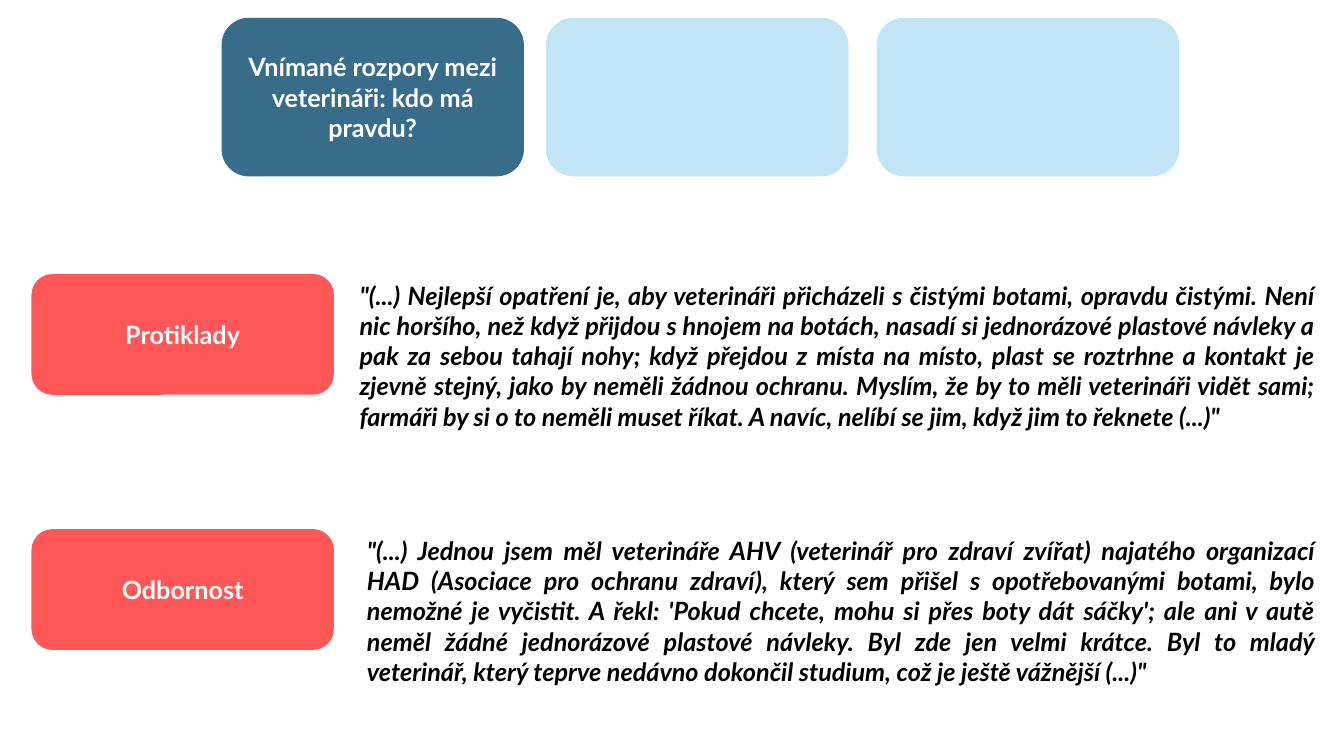
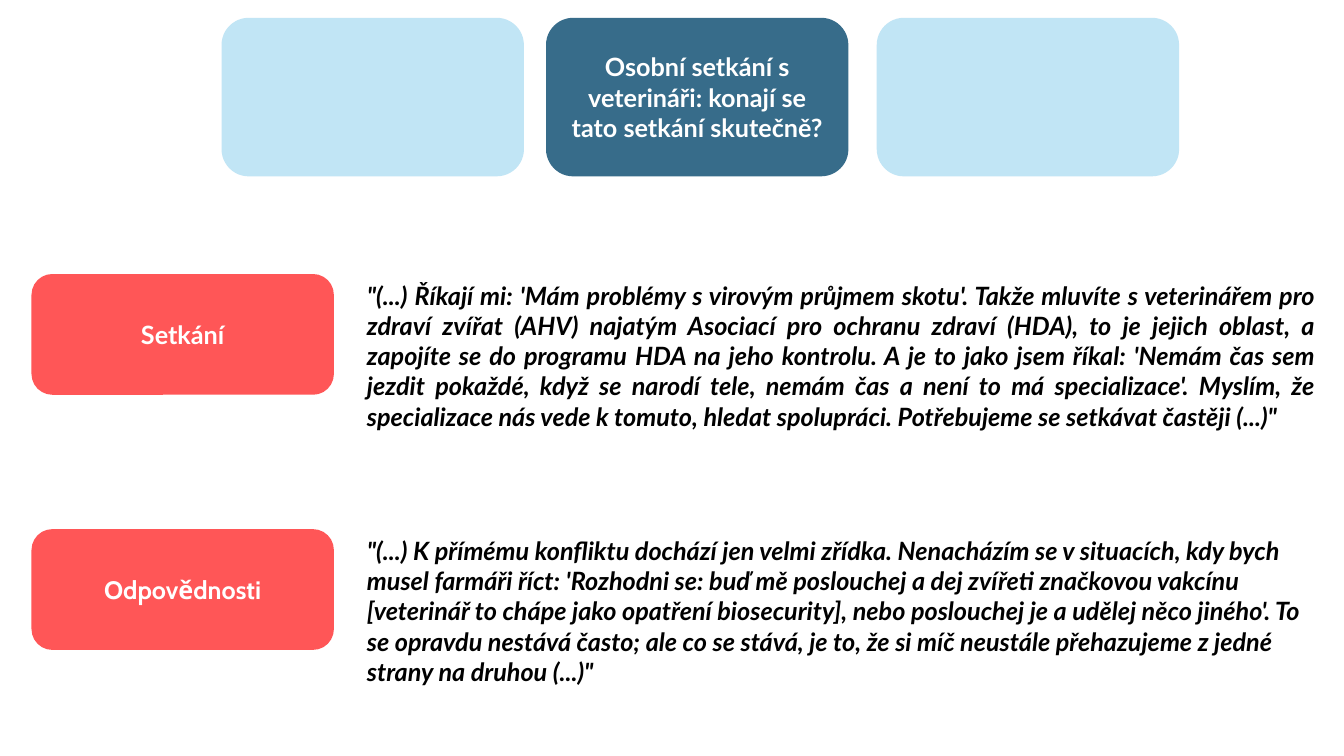
from pptx import Presentation
from pptx.dml.color import RGBColor
from pptx.enum import shapes, text
from pptx.util import Emu, Pt

PX = 9525
WHITE = RGBColor(0xFF, 0xFF, 0xFF)
BLACK = RGBColor(0x00, 0x00, 0x00)
CORAL = RGBColor(0xFF, 0x56, 0x57)
ACTIVE = RGBColor(0x37, 0x6C, 0x8A)
FADED = RGBColor(0xC1, 0xE5, 0xF5)

CARD_WIDTH = 286
TAB_LEFTS = (212, 521, 836)
TAB_TOP, TAB_HEIGHT = 18, 149
ROW_LEFT, ROW_RIGHT = 31, 1262
ROW_TOPS = (262, 505)
LABEL_HEIGHT, QUOTE_HEIGHT = 113, 156
QUOTE_INDENT = 309

CONTRASTS = (
    "\"(...) Nejlepší opatření je, aby veterináři přicházeli s čistými botami, "
    "opravdu čistými. Není nic horšího, než když přijdou s hnojem na botách, "
    "nasadí si jednorázové plastové návleky a pak za sebou tahají nohy; když "
    "přejdou z místa na místo, plast se roztrhne a kontakt je zjevně stejný, "
    "jako by neměli žádnou ochranu. Myslím, že by to měli veterináři vidět sami; "
    "farmáři by si o to neměli muset říkat. A navíc, nelíbí se jim, když jim to "
    "řeknete (...)\""
)
EXPERTISE = (
    "\"(...) Jednou jsem měl veterináře AHV (veterinář pro zdraví zvířat) "
    "najatého organizací HAD (Asociace pro ochranu zdraví), který sem přišel "
    "s opotřebovanými botami, bylo nemožné je vyčistit. A řekl: 'Pokud chcete, "
    "mohu si přes boty dát sáčky'; ale ani v autě neměl žádné jednorázové "
    "plastové návleky. Byl zde jen velmi krátce. Byl to mladý veterinář, který "
    "teprve nedávno dokončil studium, což je ještě vážnější (...)\""
)
MEETINGS = (
    "\"(...) Říkají mi: 'Mám problémy s virovým průjmem skotu'. Takže mluvíte "
    "s veterinářem pro zdraví zvířat (AHV) najatým Asociací pro ochranu zdraví "
    "(HDA), to je jejich oblast, a zapojíte se do programu HDA na jeho kontrolu. "
    "A je to jako jsem říkal: 'Nemám čas sem jezdit pokaždé, když se narodí tele, "
    "nemám čas a není to má specializace'. Myslím, že specializace nás vede "
    "k tomuto, hledat spolupráci. Potřebujeme se setkávat častěji (...)\""
)
RESPONSIBILITY = (
    "\"(...) K přímému konfliktu dochází jen velmi zřídka. Nenacházím se "
    "v situacích, kdy bych musel farmáři říct: 'Rozhodni se: buď mě poslouchej "
    "a dej zvířeti značkovou vakcínu [veterinář to chápe jako opatření "
    "biosecurity], nebo poslouchej je a udělej něco jiného'. To se opravdu "
    "nestává často; ale co se stává, je to, že si míč neustále přehazujeme "
    "z jedné strany na druhou (...)\""
)

SLIDES = (
    ("Vnímané rozpory mezi veterináři: kdo má pravdu?", (
        {"label": "Protiklady", "quote": CONTRASTS, "indent": 302},
        {"label": "Odbornost", "quote": EXPERTISE},
    )),
    ("Osobní setkání s veterináři: konají se tato setkání skutečně?", (
        {"label": "Setkání", "quote": MEETINGS},
        {"label": "Odpovědnosti", "quote": RESPONSIBILITY, "label_font": "Cabin",
         "align": text.PP_ALIGN.LEFT},
    )),
)


def scaled(*lengths):
    return [Emu(length * PX) for length in lengths]


def write(frame, words, font="Lato", color=WHITE, italic=False,
          align=text.PP_ALIGN.CENTER, anchor=text.MSO_ANCHOR.MIDDLE):
    frame.word_wrap = True
    frame.vertical_anchor = anchor
    para = frame.paragraphs[0]
    para.alignment = align
    span = para.add_run()
    span.text = words
    span.font.name = font
    span.font.size = Pt(18)
    span.font.bold = True
    span.font.italic = italic
    span.font.color.rgb = color


def add_card(page, left, top, width, height, color):
    card = page.shapes.add_shape(shapes.MSO_SHAPE.ROUNDED_RECTANGLE,
                                 *scaled(left, top, width, height))
    card.shadow.inherit = False
    card.fill.solid()
    card.fill.fore_color.rgb = color
    card.line.color.rgb = color
    card.line.width = Pt(1.5)
    return card


def add_tabs(page, top, height, active, topic):
    for index, left in enumerate(TAB_LEFTS):
        color = ACTIVE if index == active else FADED
        tab = add_card(page, left, top, CARD_WIDTH, height, color)
        if index == active:
            write(tab.text_frame, topic)


def add_quote_row(page, left, top, right, label, quote, indent=QUOTE_INDENT,
                  label_font="Lato", align=text.PP_ALIGN.JUSTIFY):
    card = add_card(page, left, top, CARD_WIDTH, LABEL_HEIGHT, CORAL)
    write(card.text_frame, label, font=label_font)
    box = page.shapes.add_textbox(
        *scaled(left + indent, top, right - left - indent, QUOTE_HEIGHT))
    write(box.text_frame, quote, color=BLACK, italic=True, align=align,
          anchor=text.MSO_ANCHOR.TOP)
    box.text_frame.auto_size = text.MSO_AUTO_SIZE.SHAPE_TO_FIT_TEXT


def main():
    deck = Presentation()
    deck.slide_width, deck.slide_height = scaled(1280, 720)
    for active, (topic, rows) in enumerate(SLIDES):
        page = deck.slides.add_slide(deck.slide_layouts[6])
        for top, row in zip(ROW_TOPS, rows):
            add_quote_row(page, ROW_LEFT, top, ROW_RIGHT, **row)
        add_tabs(page, TAB_TOP, TAB_HEIGHT, active, topic)
    deck.save("out.pptx")


if __name__ == "__main__":
    main()
